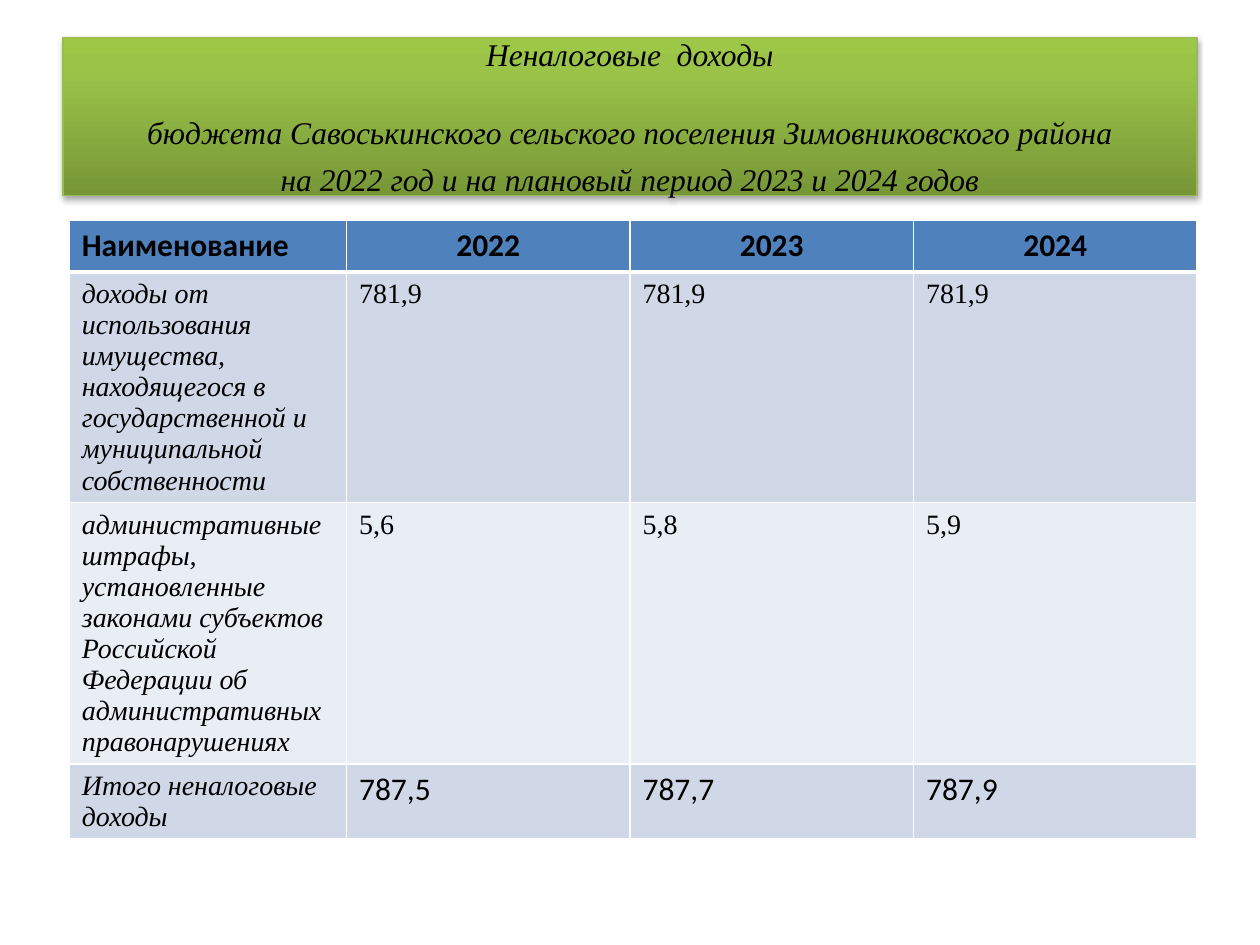
from copy import deepcopy
from typing import NamedTuple

from lxml import etree
from pptx import Presentation
from pptx.dml.color import RGBColor
from pptx.enum.shapes import MSO_SHAPE
from pptx.enum.text import MSO_ANCHOR, PP_ALIGN
from pptx.oxml.ns import qn
from pptx.util import Inches, Pt

RECT = MSO_SHAPE.RECTANGLE
MIDDLE = MSO_ANCHOR.MIDDLE
LEFT, CENTER = PP_ALIGN.LEFT, PP_ALIGN.CENTER
SERIF, SANS = "Times New Roman", "Calibri"
COLORS = {
    "ink": "000000", "white": "FFFFFF", "edge": "98B955",
    "dark": "779737", "mid": "9BC348", "light": "9DC746",
    "head": "4F81BD", "odd": "D0D8E8", "even": "E9EDF4",
}


class Style(NamedTuple):
    font: str
    size: int
    bold: bool = False
    slant: bool = False
    align: PP_ALIGN = LEFT


class Line(NamedTuple):
    text: str
    gap: int


class Row(NamedTuple):
    texts: tuple
    height: float
    fill: str
    label: Style
    value: Style
    top: int = 1
    base: int = 1


TITLE = Style(SERIF, 18, slant=True, align=CENTER)
HEAD = Style(SANS, 18, bold=True)
YEAR = HEAD._replace(align=CENTER)
NAME = Style(SERIF, 16, slant=True)
VALUE = Style(SERIF, 16)
TOTAL = Style(SANS, 18)

LINES = [
    Line("Неналоговые  доходы", 0),
    Line("бюджета Савоськинского сельского поселения Зимовниковского района", 23),
    Line("на 2022 год и на плановый период 2023 и 2024 годов", 5),
]
ROWS = [
    Row(("Наименование", "2022", "2023", "2024"),
        0.41, "head", HEAD, YEAR, base=3),
    Row(("доходы от использования имущества, находящегося в "
         "государственной и муниципальной собственности",
         "781,9", "781,9", "781,9"), 1.83, "odd", NAME, VALUE, top=3),
    Row(("административные штрафы, установленные законами субъектов "
         "Российской Федерации об административных правонарушениях",
         "5,6", "5,8", "5,9"), 2.07, "even", NAME, VALUE),
    Row(("Итого неналоговые доходы", "787,5", "787,7", "787,9"),
        0.59, "odd", NAME, TOTAL),
]
WIDTHS = [2.2, 2.25, 2.25, 2.25]
STOPS = [("dark", 0), ("mid", 0.8), ("light", 1)]


def color(name: str) -> RGBColor:
    return RGBColor.from_string(COLORS[name])


def format_text(para, style: Style) -> None:
    para.alignment = style.align
    for run in para.runs:
        font = run.font
        font.name, font.size = style.font, Pt(style.size)
        font.bold, font.italic = style.bold, style.slant
        font.color.rgb = color("ink")


def add_solid(parent, name: str):
    fill = etree.SubElement(parent, qn("a:solidFill"))
    return etree.SubElement(fill, qn("a:srgbClr"), val=COLORS[name])


def add_shade(shape) -> None:
    shape.shadow.inherit = False
    effects = shape._element.spPr.find(qn("a:effectLst"))
    shade = etree.SubElement(
        effects, qn("a:outerShdw"), blurRad=str(Pt(3.1)),
        dist=str(Pt(1.8)), dir="5400000", rotWithShape="0")
    tint = etree.SubElement(shade, qn("a:srgbClr"), val=COLORS["ink"])
    etree.SubElement(tint, qn("a:alpha"), val="35000")


def add_title(slide) -> None:
    shape = slide.shapes.add_shape(
        RECT, Inches(0.5), Inches(0.3), Inches(9), Inches(1.25))
    fill = shape.fill
    fill.gradient()
    fill.gradient_angle = 90
    stops = shape._element.spPr.find(".//" + qn("a:gsLst"))
    stops.append(deepcopy(stops[0]))
    for stop, (name, place) in zip(fill.gradient_stops, STOPS):
        stop.color.rgb = color(name)
        stop.position = place
    shape.line.color.rgb = color("edge")
    shape.line.width = Pt(0.75)
    add_shade(shape)
    frame = shape.text_frame
    frame.word_wrap = True
    frame.vertical_anchor = MIDDLE
    frame.margin_top = frame.margin_bottom = Inches(0)
    frame.text = "\n".join(line.text for line in LINES)
    for para, line in zip(frame.paragraphs, LINES):
        para.space_before = Pt(line.gap)
        format_text(para, TITLE)


def add_edges(cell, row: Row) -> None:
    props = cell._tc.get_or_add_tcPr()
    sides = {"lnL": 1, "lnR": 1, "lnT": row.top, "lnB": row.base}
    for side, width in sides.items():
        edge = etree.SubElement(props, qn(f"a:{side}"), w=str(Pt(width)))
        add_solid(edge, "white")


def add_grid(slide) -> None:
    table = slide.shapes.add_table(
        len(ROWS), len(WIDTHS), Inches(0.55), Inches(1.75),
        Inches(sum(WIDTHS)), Inches(sum(row.height for row in ROWS))).table
    for column, width in zip(table.columns, WIDTHS):
        column.width = Inches(width)
    for line, row in zip(table.rows, ROWS):
        line.height = Inches(row.height)
        for index, (cell, text) in enumerate(zip(line.cells, row.texts)):
            add_edges(cell, row)
            cell.fill.solid()
            cell.fill.fore_color.rgb = color(row.fill)
            cell.text_frame.text = text
            style = row.value if index else row.label
            format_text(cell.text_frame.paragraphs[0], style)


def main() -> None:
    deck = Presentation()
    deck.slide_width, deck.slide_height = Inches(10), Inches(7.5)
    slide = deck.slides.add_slide(deck.slide_layouts[6])
    add_title(slide)
    add_grid(slide)
    deck.save("out.pptx")


if __name__ == "__main__":
    main()
